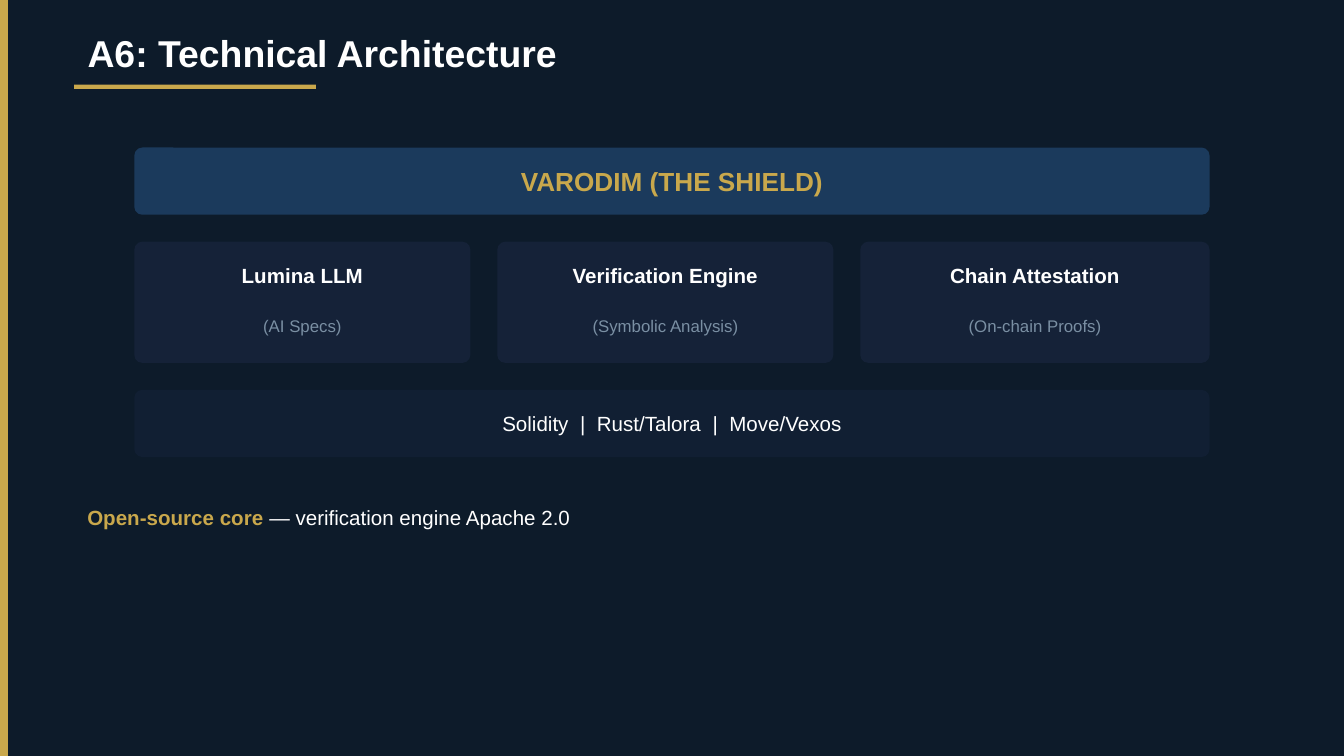
from dataclasses import dataclass
from typing import Optional

from pptx import Presentation
from pptx import util as u
from pptx.dml.color import RGBColor
from pptx.enum import shapes, text


@dataclass(frozen=True)
class Theme:
    font: str = "Arial"
    background: str = "0D1B2A"
    gold: str = "C9A84C"
    white: str = "FFFFFF"
    muted: str = "7A8FA3"
    shield: str = "1B3A5C"
    card: str = "152238"
    platform: str = "111F33"
    title_size: int = 20
    shield_size: int = 14
    body_size: int = 11
    note_size: int = 9


@dataclass(frozen=True)
class Box:
    """A rectangle in centimetres."""
    left: float
    top: float
    width: float
    height: float

    def lengths(self) -> tuple:
        return tuple(map(u.Cm, (self.left, self.top, self.width, self.height)))


@dataclass(frozen=True)
class Span:
    text: str
    size: int
    color: str
    bold: bool = False
    spacing: Optional[int] = None  # hundredths of a point


@dataclass(frozen=True)
class Component:
    name: str
    note: str


T = Theme()
LEFT, RIGHT = 2.54, 22.86
MARGIN, TEXT_WIDTH = 1.4, 22.6
GAP, CARD_WIDTH = 0.51, 6.35
BAR_HEIGHT, CARD_TOP = 1.27, 4.57
RADIUS = 0.15

COMPONENTS = [
    Component("Lumina LLM", "(AI Specs)"),
    Component("Verification Engine", "(Symbolic Analysis)"),
    Component("Chain Attestation", "(On-chain Proofs)"),
]
PLATFORMS = ["Solidity", "Rust/Talora", "Move/Vexos"]


def write(sp, spans: list[Span], align=text.PP_ALIGN.CENTER) -> None:
    tf = sp.text_frame
    tf.word_wrap = True
    tf.auto_size = text.MSO_AUTO_SIZE.NONE
    tf.vertical_anchor = text.MSO_ANCHOR.MIDDLE
    p = tf.paragraphs[0]
    p.alignment = align
    for span in spans:
        r = p.add_run()
        r.text = span.text
        r.font.name = T.font
        r.font.size = u.Pt(span.size)
        r.font.bold = span.bold
        r.font.color.rgb = RGBColor.from_string(span.color)
        if span.spacing is not None:
            r.font._element.set("spc", str(span.spacing))


def add_panel(s, box: Box, color: str, radius: float = 0):
    """Add a filled rectangle, rounded when a radius in centimetres is given."""
    kind = shapes.MSO_SHAPE.ROUNDED_RECTANGLE if radius else shapes.MSO_SHAPE.RECTANGLE
    sp = s.shapes.add_shape(kind, *box.lengths())
    if radius:
        sp.adjustments[0] = radius / min(box.width, box.height)
    sp.shadow.inherit = False
    sp.fill.solid()
    sp.fill.fore_color.rgb = RGBColor.from_string(color)
    sp.line.fill.background()
    return sp


def add_text(s, box: Box, spans: list[Span], align=text.PP_ALIGN.CENTER) -> None:
    write(s.shapes.add_textbox(*box.lengths()), spans, align)


def add_bar(s, top: float, color: str, spans: list[Span]) -> None:
    write(add_panel(s, Box(LEFT, top, RIGHT - LEFT, BAR_HEIGHT), color, RADIUS), spans)


def add_card(s, left: float, width: float, component: Component) -> None:
    add_panel(s, Box(left, CARD_TOP, width, 2.29), T.card, RADIUS)
    add_text(s, Box(left, CARD_TOP + 0.13, width, 1.02),
             [Span(component.name, T.body_size, T.white, bold=True)])
    add_text(s, Box(left, CARD_TOP + 1.14, width, 0.89),
             [Span(component.note, T.note_size, T.muted)])


def platform_spans() -> list[Span]:
    """Separate the platforms by bars, with wider spacing around each bar."""
    spans = [Span(PLATFORMS[0], T.body_size, T.white)]
    for name in PLATFORMS[1:]:
        spans += [Span(" |", T.body_size, T.white, spacing=306),
                  Span(f" {name}", T.body_size, T.white)]
    return spans


def main() -> None:
    prs = Presentation()
    prs.slide_width, prs.slide_height = u.Cm(25.4), u.Cm(14.29)
    s = prs.slides.add_slide(prs.slide_layouts[5])
    s.background.fill.solid()
    s.background.fill.fore_color.rgb = RGBColor.from_string(T.background)

    add_panel(s, Box(0, 0, 0.15, 14.29), T.gold)
    title = s.shapes.title
    title.left, title.top, title.width, title.height = Box(
        MARGIN, 0.46, TEXT_WIDTH, 1.07).lengths()
    write(title, [Span("A6: Technical Architecture", T.title_size, T.white, bold=True)],
          text.PP_ALIGN.LEFT)
    add_panel(s, Box(MARGIN, 1.6, 4.57, 0.08), T.gold)

    add_bar(s, 2.79, T.shield,
            [Span("VARODIM (THE SHIELD)", T.shield_size, T.gold, bold=True)])
    for i, component in enumerate(COMPONENTS):
        left = LEFT + i * (CARD_WIDTH + GAP)
        is_last = i == len(COMPONENTS) - 1
        add_card(s, left, RIGHT - left if is_last else CARD_WIDTH, component)
    add_bar(s, 7.37, T.platform, platform_spans())

    add_text(s, Box(MARGIN, 9.4, TEXT_WIDTH, 0.76),
             [Span("Open-source core", T.body_size, T.gold, bold=True),
              Span(" — verification engine Apache 2.0", T.body_size, T.white)],
             text.PP_ALIGN.LEFT)
    prs.save("out.pptx")


if __name__ == "__main__":
    main()
